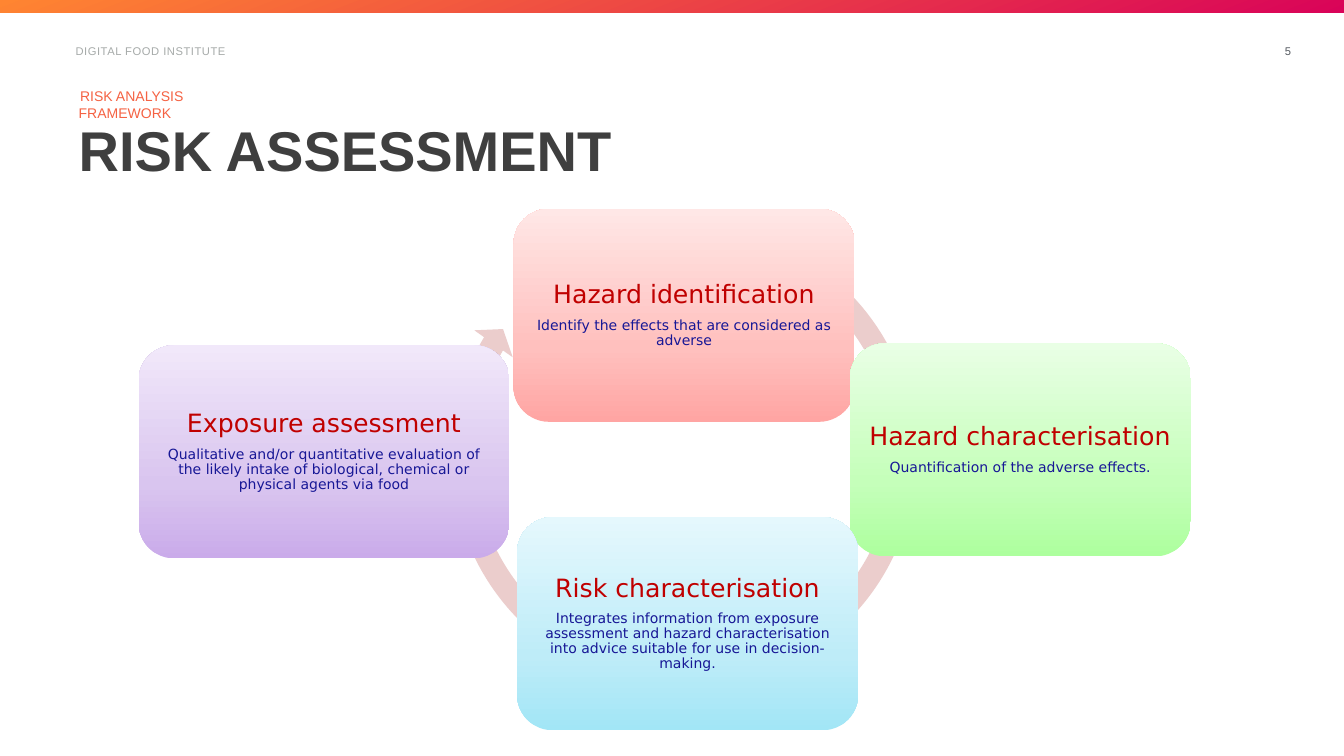
from dataclasses import dataclass

from lxml import etree
from pptx import Presentation
from pptx.dml.color import RGBColor
from pptx.enum import shapes, text
from pptx.oxml.ns import qn
from pptx.util import Inches, Pt

ALIGN, ANCHOR, SHAPE = text.PP_ALIGN, text.MSO_ANCHOR, shapes.MSO_SHAPE
Box = tuple[float, float, float, float]
Stops = tuple[tuple[int, str], ...]


@dataclass(frozen=True)
class Style:
    size: int
    color: str
    font: str = "Arial"
    bold: bool = False


@dataclass(frozen=True)
class Theme:
    title: Style = Style(80, "3F3F3F", bold=True)
    kicker: Style = Style(20, "F56243")
    header: Style = Style(16, "A6AAA9")
    number: Style = Style(16, "53585F")
    card_title: Style = Style(36, "C00000", "DejaVu Sans")
    card_body: Style = Style(20, "171796", "DejaVu Sans")
    bar: Stops = ((0, "FF8531"), (100, "D90359"))
    ring: str = "EBCDCC"


@dataclass(frozen=True)
class Card:
    left: float
    top: float
    width: float
    colors: tuple[str, str, str]
    title: str
    body: str


THEME = Theme()
CARD_HEIGHT = 4.23
CARD_STOPS = (0, 35, 100)
CARDS = (
    Card(10.19, 4.14, 6.77, ("FFA5A3", "FFC0BE", "FFE7E6"), "Hazard identification",
         "Identify the effects that are considered as adverse"),
    Card(16.86, 6.81, 6.77, ("ADFF9E", "C5FFBA", "E9FFE5"), "Hazard characterisation",
         "Quantification of the adverse effects."),
    Card(10.26, 10.26, 6.77, ("A2E6F6", "BEECF8", "E5F8FD"), "Risk characterisation",
         "Integrates information from exposure assessment and hazard "
         "characterisation into advice suitable for use in decision-making."),
    Card(2.75, 6.85, 7.36, ("CAABEA", "D9C5EF", "F1E8FA"), "Exposure assessment",
         "Qualitative and/or quantitative evaluation of the likely intake of "
         "biological, chemical or physical agents via food"),
)


def place(sp, box: Box) -> None:
    sp.left, sp.top, sp.width, sp.height = map(Inches, box)


def set_frame(tf, inset: float, anchor: ANCHOR) -> None:
    tf.word_wrap = True
    tf.auto_size = text.MSO_AUTO_SIZE.NONE
    tf.vertical_anchor = anchor
    tf.margin_left = tf.margin_right = tf.margin_top = tf.margin_bottom = Inches(inset)


def write(p, content: str, style: Style, align: ALIGN = ALIGN.LEFT, line: float = 1.0):
    p.alignment, p.line_spacing = align, line
    p.space_before = Pt(0)
    r = p.add_run()
    r.text = content
    f = r.font
    f.name, f.size, f.bold = style.font, Pt(style.size), style.bold
    f.color.rgb = RGBColor.from_string(style.color)
    return r


def add_shape(s, kind: SHAPE, box: Box):
    sp = s.shapes.add_shape(kind, *map(Inches, box))
    sp.shadow.inherit = False
    sp.line.fill.background()
    return sp


def fill_gradient(sp, stops: Stops, angle: int) -> None:
    """Fill with any number of stops; the angle runs clockwise."""
    sp.fill.gradient()
    sp.fill.gradient_angle = 360 - angle
    gs_list = next(sp.element.iter(qn("a:gsLst")))
    for gs in list(gs_list):
        gs_list.remove(gs)
    for pos, color in stops:
        gs = etree.SubElement(gs_list, qn("a:gs"), pos=str(pos * 1000))
        etree.SubElement(gs, qn("a:srgbClr"), val=color)


def add_card(s, card: Card) -> None:
    sp = add_shape(s, SHAPE.ROUNDED_RECTANGLE,
                   (card.left, card.top, card.width, CARD_HEIGHT))
    fill_gradient(sp, tuple(zip(CARD_STOPS, card.colors)), 270)
    tf = sp.text_frame
    set_frame(tf, 0.15, ANCHOR.MIDDLE)
    paragraphs = (tf.paragraphs[0], tf.add_paragraph())
    lines = ((card.title, THEME.card_title), (card.body, THEME.card_body))
    for p, (content, style) in zip(paragraphs, lines):
        write(p, content, style, ALIGN.CENTER, 0.9)
        p.space_after = Pt(style.size * 0.35)


def add_cycle_arrow(s) -> None:
    sp = add_shape(s, SHAPE.CIRCULAR_ARROW, (8.72, 4.2, 9.7, 9.7))
    sp.fill.solid()
    sp.fill.fore_color.rgb = RGBColor.from_string(THEME.ring)
    for i, value in enumerate((0.047, 2.729, 126.326, 181.684, 0.048)):
        sp.adjustments[i] = value


def add_headings(s) -> None:
    title, kicker, unused_left, header, unused_right = s.placeholders
    for ph in (unused_left, unused_right):
        ph.element.getparent().remove(ph.element)

    place(title, (1.5, 2.49, 22.68, 2.87))
    set_frame(title.text_frame, 0.06, ANCHOR.TOP)
    write(title.text_frame.paragraphs[0], "RISK ASSESSMENT", THEME.title, line=0.8)

    place(kicker, (1.5, 2.02, 4.08, 0.45))
    tf = kicker.text_frame
    set_frame(tf, 0.06, ANCHOR.BOTTOM)
    tf.margin_right = Inches(0.6)
    p = tf.paragraphs[0]
    write(p, "RISK ANALYSIS FRAMEWORK", THEME.kicker)
    p._p.get_or_add_pPr().set("indent", str(Inches(0.03)))

    place(header, (1.5, 0.88, 14.97, 0.27))
    set_frame(header.text_frame, 0, ANCHOR.MIDDLE)
    r = write(header.text_frame.paragraphs[0], "DIGITAL FOOD INSTITUTE", THEME.header)
    r.font._element.set("spc", "80")

    number = s.shapes.add_textbox(*map(Inches, (24.68, 0.82, 1, 0.38)))
    set_frame(number.text_frame, 0.06, ANCHOR.MIDDLE)
    write(number.text_frame.paragraphs[0], "5", THEME.number, ALIGN.RIGHT)


def main() -> None:
    prs = Presentation()
    prs.slide_width, prs.slide_height = Inches(26.67), Inches(15)
    s = prs.slides.add_slide(prs.slide_layouts.get_by_name("Comparison"))
    bar = add_shape(s, SHAPE.RECTANGLE, (0, 0, 26.67, 0.25))
    fill_gradient(bar, THEME.bar, 69)
    add_headings(s)
    add_cycle_arrow(s)
    for card in CARDS:
        add_card(s, card)
    prs.save("out.pptx")


if __name__ == "__main__":
    main()
